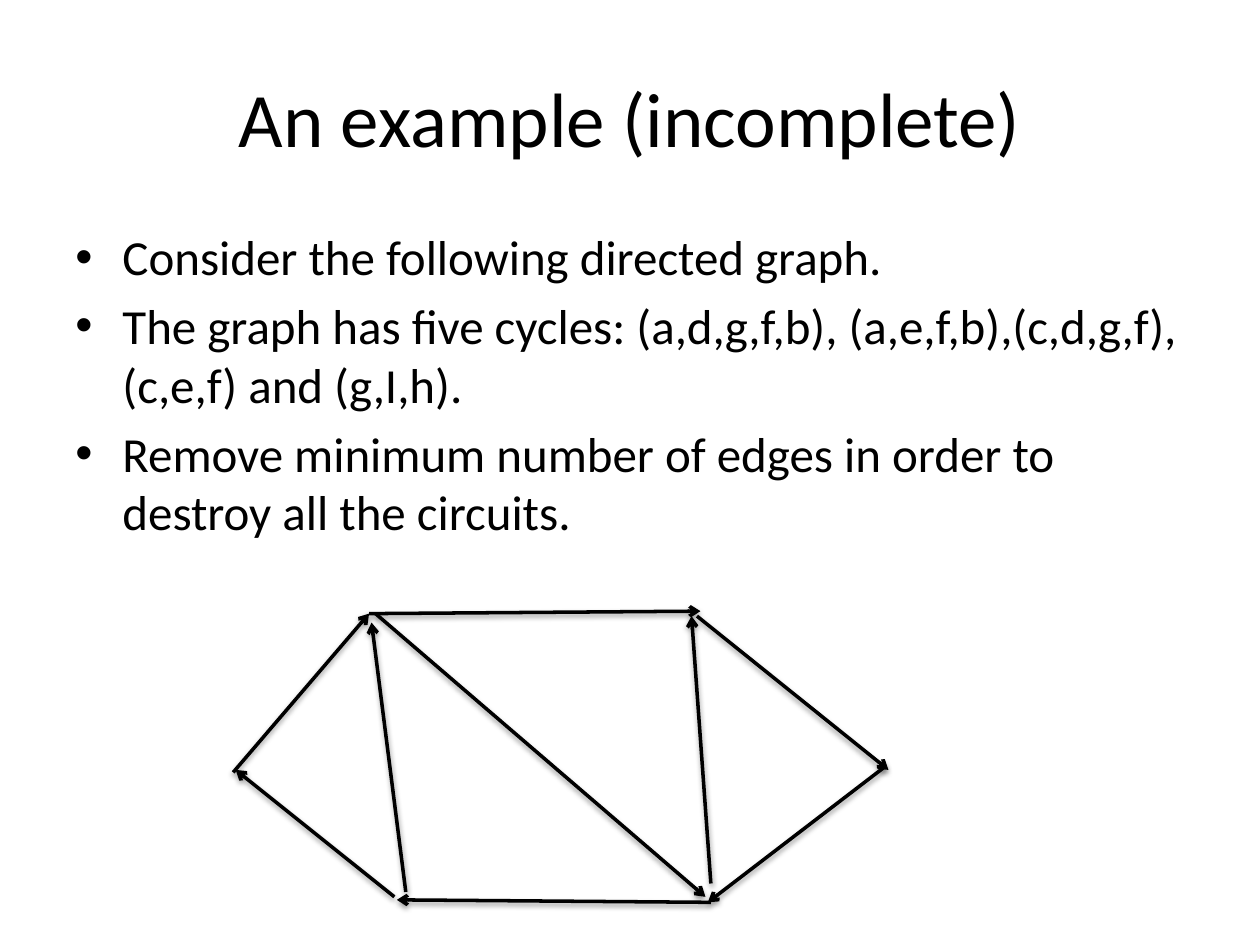
from lxml import etree
from pptx import Presentation
from pptx import util as u
from pptx.dml.color import RGBColor
from pptx.enum import shapes, text
from pptx.oxml import ns

BLACK = RGBColor(0x00, 0x00, 0x00)
WHITE = RGBColor(0xFF, 0xFF, 0xFF)

BULLETS = [
    "Consider the following directed graph.",
    "The graph has five cycles: (a,d,g,f,b), (a,e,f,b),(c,d,g,f), (c,e,f) and (g,I,h).",
    "Remove minimum number of edges in order to destroy all the circuits.",
]

EDGES = [
    ((4.7, 15.57), (7.44, 12.37)),
    ((7.44, 12.37), (14.12, 12.32)),
    ((14.05, 12.42), (17.91, 15.52)),
    ((17.86, 15.44), (14.27, 18.19)),
    ((14.33, 18.19), (8, 18.14)),
    ((7.95, 18.08), (4.75, 15.52)),
    ((8.18, 17.98), (7.49, 12.55)),
    ((7.57, 12.37), (14.22, 18.08)),
    ((14.33, 17.81), (13.94, 12.42)),
]


def add_child(parent, tag, **attributes):
    return etree.SubElement(parent, ns.qn(tag), attributes)


class GraphSlide:
    """Hold the text and edge style together with the slide being built."""

    font = "Calibri"
    indent = u.Cm(0.95)
    edge_width = u.Pt(2)

    def __init__(self, deck):
        self.page = deck.slides.add_slide(deck.slide_layouts[6])
        self.page.background.fill.solid()
        self.page.background.fill.fore_color.rgb = WHITE

    def frame(self, left, top, width, height):
        box = self.page.shapes.add_textbox(*map(u.Cm, (left, top, width, height)))
        box.text_frame.word_wrap = True
        return box.text_frame

    def span(self, para, words, size):
        span = para.add_run()
        span.text = words
        span.font.name = self.font
        span.font.size = u.Pt(size)
        span.font.color.rgb = BLACK

    def title(self, words, *place):
        frame = self.frame(*place)
        frame.vertical_anchor = text.MSO_ANCHOR.MIDDLE
        para = frame.paragraphs[0]
        para.alignment = text.PP_ALIGN.CENTER
        self.span(para, words, 44)

    def bullets(self, lines, *place):
        frame = self.frame(*place)
        for index, words in enumerate(lines):
            para = frame.add_paragraph() if index else frame.paragraphs[0]
            para.space_before = u.Pt(5.6)
            properties = para._p.get_or_add_pPr()
            properties.set("marL", str(self.indent))
            properties.set("indent", str(-self.indent))
            add_child(properties, "a:buFont", typeface="Arial")
            add_child(properties, "a:buChar", char="•")
            self.span(para, words, 28)

    def edge(self, start, end):
        edge = self.page.shapes.add_connector(
            shapes.MSO_CONNECTOR.STRAIGHT, *map(u.Cm, start + end))
        edge.line.width = self.edge_width
        edge.line.color.rgb = BLACK
        add_child(edge.line._get_or_add_ln(), "a:tailEnd", type="arrow")
        effects = add_child(edge._element.spPr, "a:effectLst")
        shadow = add_child(effects, "a:outerShdw", blurRad="40000", dist="20000",
                           dir="5400000", rotWithShape="0")
        colour = add_child(shadow, "a:srgbClr", val=str(BLACK))
        add_child(colour, "a:alpha", val="38000")


def main():
    deck = Presentation()
    deck.slide_width, deck.slide_height = u.Cm(25.4), u.Cm(19.05)
    slide = GraphSlide(deck)
    slide.title("An example (incomplete)", 1.27, 0.76, 22.86, 3.18)
    slide.bullets(BULLETS, 1.27, 4.45, 22.86, 12.57)
    for start, end in EDGES:
        slide.edge(start, end)
    deck.save("out.pptx")


if __name__ == "__main__":
    main()
